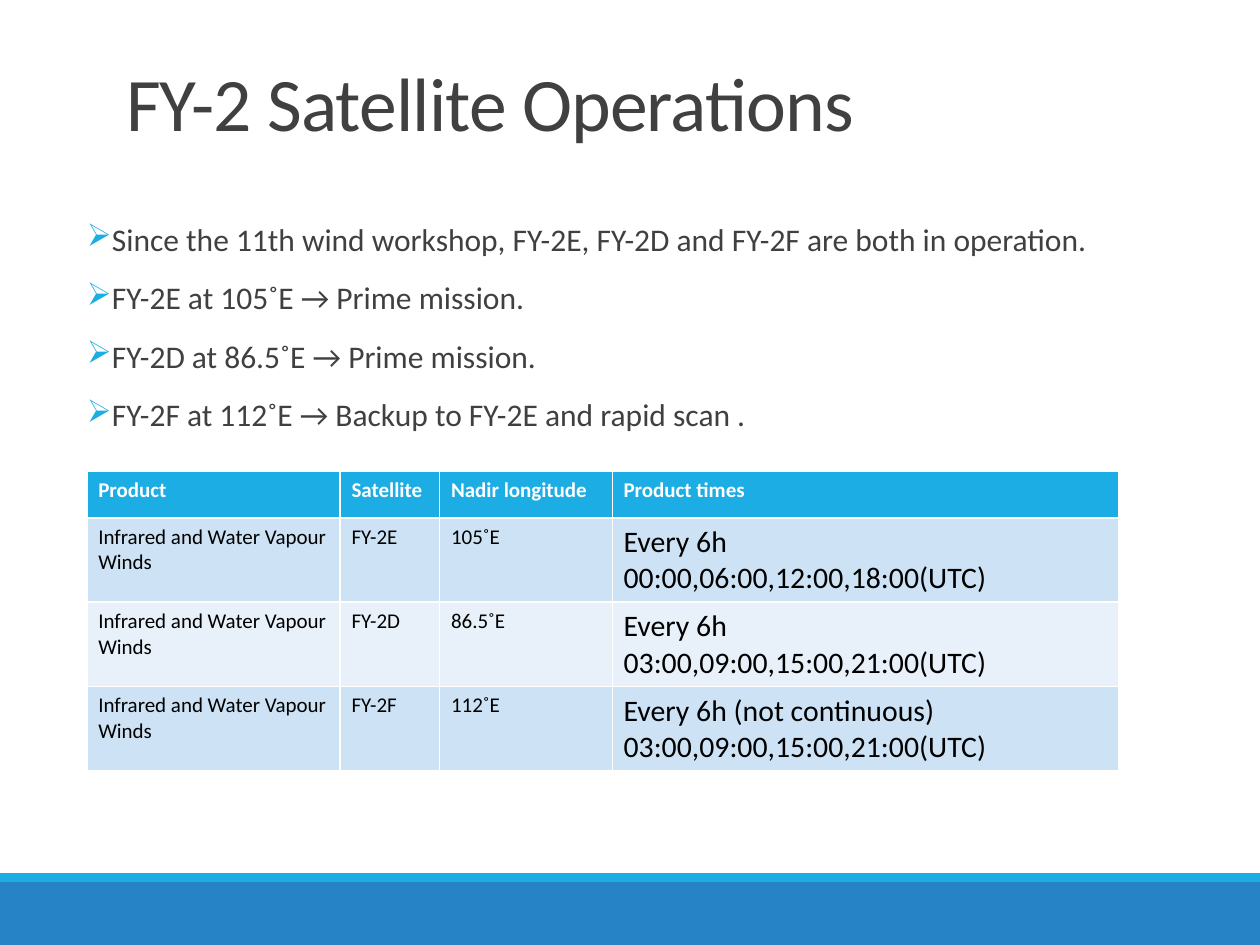
from pptx import Presentation
from pptx.dml.color import RGBColor
from pptx.enum.shapes import MSO_SHAPE
from pptx.enum.text import MSO_ANCHOR, MSO_AUTO_SIZE, PP_ALIGN
from pptx.oxml.ns import qn
from pptx.util import Inches, Pt
from lxml.etree import SubElement

COLORS = {
    "white": "FFFFFF",
    "black": "000000",
    "text": "404040",
    "accent": "1CADE4",
    "footer": "2683C6",
    "odd": "CDE3F5",
    "even": "E8F1FA",
}
FONT = "Calibri"
WIDTH, HEIGHT = 10, 7.5
LEFT = 0.69
COLUMNS = [2.01, 0.79, 1.37, 4.02]
ROWS = [0.37, 0.67, 0.67, 0.67]

BULLETS = [
    "Since the 11th wind workshop, FY-2E, FY-2D and FY-2F are both in operation.",
    "FY-2E at 105˚E → Prime mission.",
    "FY-2D at 86.5˚E → Prime mission.",
    "FY-2F at 112˚E → Backup to FY-2E and rapid scan .",
]
HEADER = ["Product", "Satellite", "Nadir longitude", "Product times"]
PRODUCT = "Infrared and Water Vapour Winds"
SATELLITES = [
    [PRODUCT, "FY-2E", "105˚E", "Every 6h\n00:00,06:00,12:00,18:00(UTC)"],
    [PRODUCT, "FY-2D", "86.5˚E", "Every 6h\n03:00,09:00,15:00,21:00(UTC)"],
    [PRODUCT, "FY-2F", "112˚E", "Every 6h (not continuous)\n03:00,09:00,15:00,21:00(UTC)"],
]


def rgb(name):
    return RGBColor.from_string(COLORS[name])


def paint(sp, color):
    sp.fill.solid()
    sp.fill.fore_color.rgb = rgb(color)


def write(tf, text, size=18, color="text", bold=False, line=None, before=None, after=None):
    tf.text = text
    for p in tf.paragraphs:
        p.alignment = PP_ALIGN.LEFT
        p.line_spacing = line
        p.space_before = before
        p.space_after = after
        for r in p.runs:
            r.font.name = FONT
            r.font.size = Pt(size)
            r.font.bold = bold
            r.font.color.rgb = rgb(color)


def add_band(s, top, height, color):
    sp = s.shapes.add_shape(MSO_SHAPE.RECTANGLE, 0, Inches(top), Inches(WIDTH), Inches(height))
    sp.shadow.inherit = False
    sp.line.fill.background()
    paint(sp, color)


def set_title(s, text):
    sp = s.shapes.title
    sp.left, sp.top, sp.width, sp.height = map(Inches, (0.9, 0.31, 8.25, 1.59))
    tf = sp.text_frame
    tf.auto_size = MSO_AUTO_SIZE.NONE
    tf.vertical_anchor = MSO_ANCHOR.BOTTOM
    tf.margin_bottom = Inches(0.73)
    write(tf, text, size=43.2, line=0.85)
    tf.paragraphs[0].runs[0].font._element.set("spc", "-50")


def add_bullet(p, char):
    pPr = p._p.get_or_add_pPr()
    indent = Inches(0.1)
    pPr.set("marL", str(indent))
    pPr.set("indent", str(-indent))
    color = SubElement(pPr, qn("a:buClr"))
    SubElement(color, qn("a:srgbClr")).set("val", COLORS["accent"])
    SubElement(pPr, qn("a:buChar")).set("char", char)


def add_bullets(s, lines):
    sp = s.shapes.add_textbox(Inches(LEFT), Inches(1.73), Inches(8.62), Inches(4.76))
    paint(sp, "white")
    tf = sp.text_frame
    tf.word_wrap = True
    tf.margin_left = tf.margin_right = 0
    write(tf, "\n".join(lines), line=0.9, before=Pt(12), after=Pt(2))
    for p in tf.paragraphs:
        add_bullet(p, "➢")


def fill_cell(cell, text, fill, **fmt):
    paint(cell, fill)
    cell.margin_left = cell.margin_right = Inches(0.09)
    write(cell.text_frame, text, **fmt)


def add_schedule(s, header, rows):
    frame = s.shapes.add_table(len(ROWS), len(COLUMNS), Inches(LEFT), Inches(3.74),
                               Inches(sum(COLUMNS)), Inches(sum(ROWS)))
    table = frame.table
    for column, width in zip(table.columns, COLUMNS):
        column.width = Inches(width)
    for row, height in zip(table.rows, ROWS):
        row.height = Inches(height)
    for j, text in enumerate(header):
        fill_cell(table.cell(0, j), text, "accent", size=12, color="white", bold=True)
    for i, row in enumerate(rows, 1):
        for j, text in enumerate(row):
            size = 17 if j == len(row) - 1 else 12
            fill_cell(table.cell(i, j), text, "odd" if i % 2 else "even", size=size, color="black")


def main():
    prs = Presentation()
    prs.slide_width, prs.slide_height = Inches(WIDTH), Inches(HEIGHT)
    s = prs.slides.add_slide(prs.slide_layouts[5])
    add_band(s, 7, 0.5, "footer")
    add_band(s, 6.93, 0.07, "accent")
    set_title(s, "FY-2 Satellite Operations")
    add_bullets(s, BULLETS)
    add_schedule(s, HEADER, SATELLITES)
    prs.save("out.pptx")


if __name__ == "__main__":
    main()
